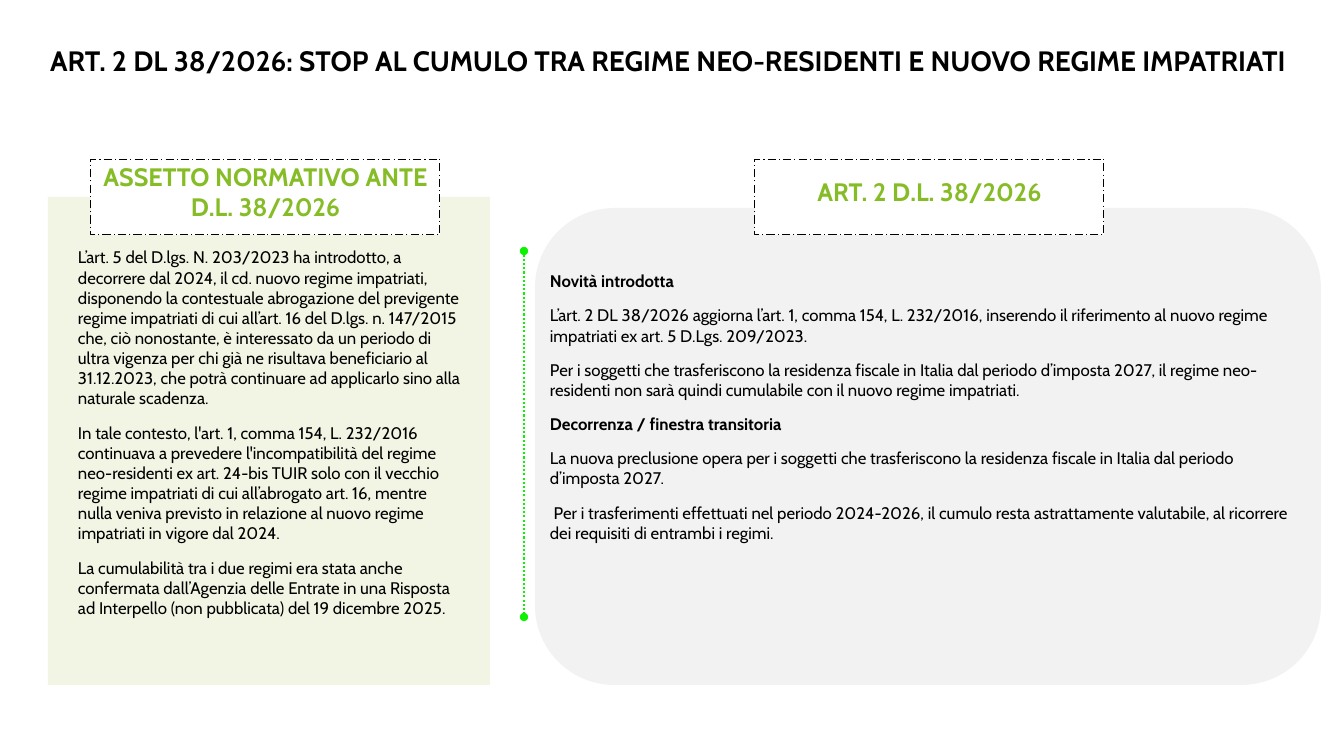
from lxml import etree
from pptx import Presentation
from pptx.dml.color import RGBColor
from pptx.enum.dml import MSO_LINE
from pptx.enum.shapes import MSO_CONNECTOR, MSO_SHAPE
from pptx.enum.text import MSO_ANCHOR, PP_ALIGN
from pptx.oxml.ns import qn
from pptx.util import Pt

PX = 914400 / 100.8
FONT = "Cabin"
COLORS = {
    "black": "000000", "white": "FFFFFF", "label": "86BC25",
    "before": "F2F5E3", "after": "F2F2F2", "divider": "0DF200",
}
RECT, ROUNDED = MSO_SHAPE.RECTANGLE, MSO_SHAPE.ROUNDED_RECTANGLE
TOP, MIDDLE = MSO_ANCHOR.TOP, MSO_ANCHOR.MIDDLE
LEFT, CENTER = PP_ALIGN.LEFT, PP_ALIGN.CENTER
LABEL_SIZE = (349, 76)

TITLE = ("ART. 2 DL 38/2026: STOP AL CUMULO TRA REGIME NEO-RESIDENTI "
         "E NUOVO REGIME IMPATRIATI")
# Each paragraph is its text and whether it is a bold heading
BEFORE = [
    ("L’art. 5 del D.lgs. N. 203/2023 ha introdotto, a decorrere dal 2024, il cd. "
     "nuovo regime impatriati, disponendo la contestuale abrogazione del previgente "
     "regime impatriati di cui all’art. 16 del D.lgs. n. 147/2015 che, ciò nonostante, "
     "è interessato da un periodo di ultra vigenza per chi già ne risultava "
     "beneficiario al 31.12.2023, che potrà continuare ad applicarlo sino alla "
     "naturale scadenza.", False),
    ("In tale contesto, l'art. 1, comma 154, L. 232/2016 continuava a prevedere "
     "l'incompatibilità del regime neo-residenti ex art. 24-bis TUIR solo con il "
     "vecchio regime impatriati di cui all’abrogato art. 16, mentre nulla veniva "
     "previsto in relazione al nuovo regime impatriati in vigore dal 2024.", False),
    ("La cumulabilità tra i due regimi era stata anche confermata dall’Agenzia delle "
     "Entrate in una Risposta ad Interpello (non pubblicata) del 19 dicembre 2025.",
     False),
]
AFTER = [
    ("Novità introdotta", True),
    ("L’art. 2 DL 38/2026 aggiorna l’art. 1, comma 154, L. 232/2016, inserendo il "
     "riferimento al nuovo regime impatriati ex art. 5 D.Lgs. 209/2023.", False),
    ("Per i soggetti che trasferiscono la residenza fiscale in Italia dal periodo "
     "d’imposta 2027, il regime neo-residenti non sarà quindi cumulabile con il "
     "nuovo regime impatriati.", False),
    ("Decorrenza / finestra transitoria", True),
    ("La nuova preclusione opera per i soggetti che trasferiscono la residenza "
     "fiscale in Italia dal periodo d’imposta 2027.", False),
    (" Per i trasferimenti effettuati nel periodo 2024-2026, il cumulo resta "
     "astrattamente valutabile, al ricorrere dei requisiti di entrambi i regimi.",
     False),
]


def emu(*lengths):
    return [round(length * PX) for length in lengths]


def color(name):
    return RGBColor.from_string(COLORS[name])


def write(shape, paragraphs, size, ink="black", align=LEFT, anchor=TOP, bottom=0):
    frame = shape.text_frame
    frame.word_wrap = True
    frame.vertical_anchor = anchor
    frame.margin_left = frame.margin_right = frame.margin_top = 0
    frame.margin_bottom = emu(bottom)[0]
    for index, (text, bold) in enumerate(paragraphs):
        para = frame.add_paragraph() if index else frame.paragraphs[0]
        para.text = text
        para.alignment = align
        para.space_before = Pt(0)
        para.space_after = Pt(10)
        font = para.font
        font.name, font.size, font.bold = FONT, Pt(size), bold
        font.color.rgb = color(ink)


def add_block(page, kind, box, fill):
    block = page.shapes.add_shape(kind, *emu(*box))
    block.shadow.inherit = False
    block.fill.solid()
    block.fill.fore_color.rgb = color(fill)
    block.line.fill.background()
    return block


def add_title(page, box):
    title = page.shapes.title
    title.left, title.top, title.width, title.height = emu(*box)
    write(title, [(TITLE, True)], 20)


def add_panel(page, kind, box, fill, paragraphs, text_box, anchor):
    """Coloured panel; text_box is relative to the panel's top left corner."""
    left, top = box[:2]
    add_block(page, kind, box, fill)
    dx, dy, width, height = text_box
    body = page.shapes.add_textbox(*emu(left + dx, top + dy, width, height))
    write(body, paragraphs, 12, anchor=anchor)


def add_label(page, left, top, text):
    label = add_block(page, RECT, (left, top, *LABEL_SIZE), "white")
    label.line.color.rgb = color("black")
    label.line.width = Pt(0.75)
    label.line.dash_style = MSO_LINE.LONG_DASH_DOT
    write(label, [(text, True)], 18, "label", CENTER, MIDDLE, bottom=11)


def add_divider(page, x, top, bottom):
    divider = page.shapes.add_connector(MSO_CONNECTOR.STRAIGHT, *emu(x, top, x, bottom))
    divider.line.color.rgb = color("divider")
    divider.line.width = Pt(1.5)
    divider.line.dash_style = MSO_LINE.ROUND_DOT
    outline = divider.line._get_or_add_ln()
    for end in ("a:headEnd", "a:tailEnd"):
        etree.SubElement(outline, qn(end), type="oval")
    etree.SubElement(divider._element.spPr, qn("a:effectLst"))


def main():
    deck = Presentation()
    deck.slide_width, deck.slide_height = emu(1344, 756)
    page = deck.slides.add_slide(deck.slide_layouts[5])

    add_title(page, (50, 43, 1282, 65))
    # New rules on the right, earlier rules on the left
    add_panel(page, ROUNDED, (535, 208, 786, 477), "after", AFTER,
              (15, 63, 758, 309), TOP)
    add_panel(page, RECT, (48, 197, 442, 488), "before", BEFORE,
              (30, 0, 386, 471), MIDDLE)
    add_divider(page, 524, 251, 617)
    # Labels over the panels' top edges
    add_label(page, 755, 159, "ART. 2 D.L. 38/2026")
    add_label(page, 91, 159, "ASSETTO NORMATIVO ANTE D.L. 38/2026")

    deck.save("out.pptx")


if __name__ == "__main__":
    main()
